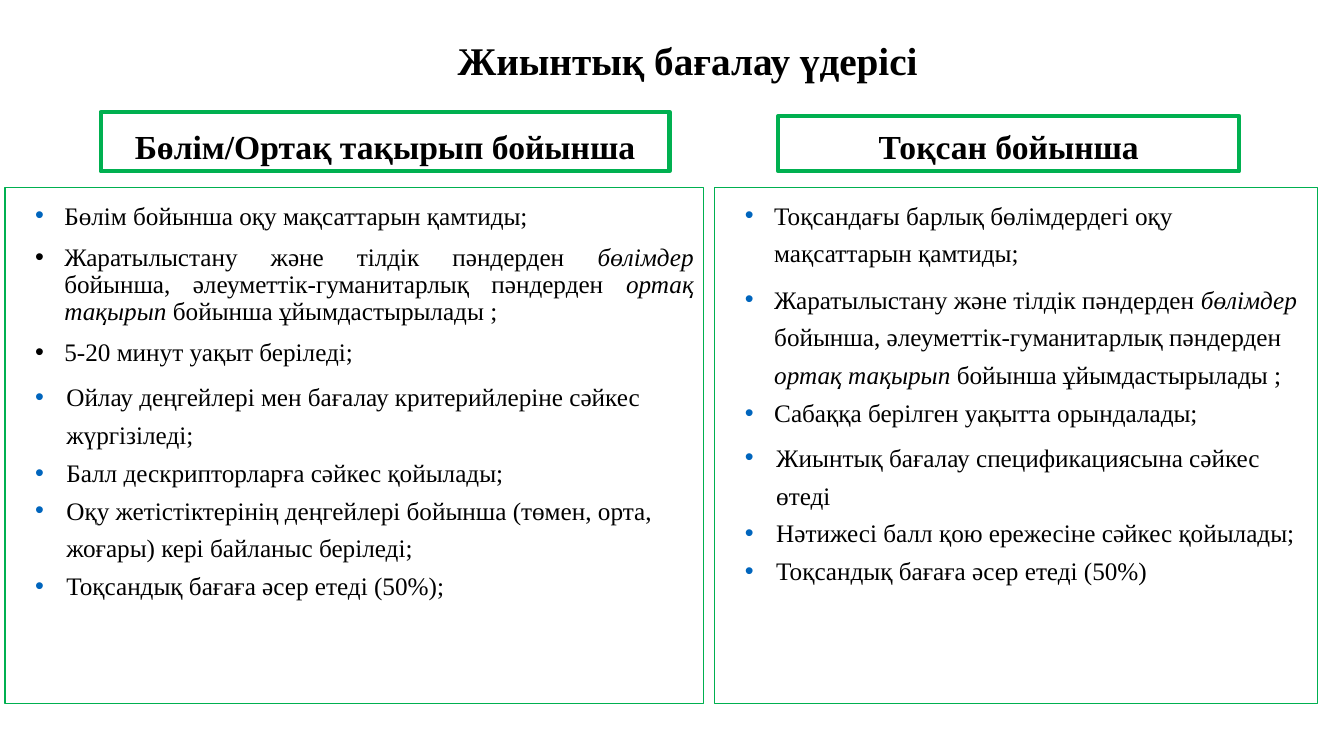
import pptx
import pptx.dml.color
import pptx.enum.shapes
import pptx.enum.text
import pptx.util
from pptx.util import Inches
from lxml import etree

BLACK = pptx.dml.color.RGBColor(0x00, 0x00, 0x00)
GREEN = pptx.dml.color.RGBColor(0x00, 0xB0, 0x50)
BLUE = pptx.dml.color.RGBColor(0x00, 0x65, 0xBD)
FONT = "Times New Roman"
ALIGN = pptx.enum.text.PP_ALIGN
ANCHOR = pptx.enum.text.MSO_ANCHOR


def add_run(p, text, size, bold=False, italic=False):
    r = p.add_run()
    r.text = text
    r.font.name = FONT
    r.font.size = pptx.util.Pt(size)
    r.font.bold = bold
    r.font.italic = italic
    r.font.color.rgb = BLACK


def add_bullet(p, color, margin, indent):
    """Give the paragraph a coloured bullet with a hanging indent."""
    pPr = p._p.get_or_add_pPr()
    pPr.set("marL", str(Inches(margin)))
    pPr.set("indent", str(Inches(indent)))
    buClr = etree.SubElement(pPr, pptx.oxml.ns.qn("a:buClr"))
    etree.SubElement(buClr, pptx.oxml.ns.qn("a:srgbClr"), val=str(color))
    etree.SubElement(pPr, pptx.oxml.ns.qn("a:buFont"), typeface="Arial")
    etree.SubElement(pPr, pptx.oxml.ns.qn("a:buChar"), char="•")


prs = pptx.Presentation()
prs.slide_width = Inches(13.33)
prs.slide_height = Inches(7.5)
s = prs.slides.add_slide(prs.slide_layouts[6])

# Text pieces at odd positions are italic
subjects = [
    "Жаратылыстану және тілдік пәндерден ",
    "бөлімдер ",
    "бойынша, әлеуметтік-гуманитарлық пәндерден ",
    "ортақ тақырып ",
    "бойынша ұйымдастырылады ;",
]

# Paragraph styles: alignment, line spacing, bullet colour, left margin, indent
NEAR = (ALIGN.LEFT, 1.25, BLUE, 0.49, -0.29)
TIGHT = (ALIGN.JUSTIFY, 0.9, BLACK, 0.49, -0.29)
FAR = (ALIGN.LEFT, 1.25, BLUE, 0.51, -0.31)

# Each item: style, space before, space after, text pieces
section_items = [
    (NEAR, 0, 0, ["Бөлім бойынша оқу мақсаттарын қамтиды;"]),
    (TIGHT, 10, 0, subjects),
    (TIGHT, 10, 0, ["5-20 минут уақыт беріледі;"]),
    (FAR, 5, 0, ["Ойлау деңгейлері мен бағалау критерийлеріне сәйкес жүргізіледі;"]),
    (FAR, 0, 0, ["Балл дескрипторларға сәйкес қойылады;"]),
    (FAR, 0, 0, ["Оқу жетістіктерінің деңгейлері бойынша (төмен, орта, жоғары) "
                 "кері байланыс беріледі;"]),
    (FAR, 0, 0, ["Тоқсандық бағаға әсер етеді (50%);"]),
]
term_items = [
    (NEAR, 0, 6, ["Тоқсандағы барлық бөлімдердегі оқу мақсаттарын қамтиды;"]),
    (NEAR, 0, 0, subjects),
    (NEAR, 0, 0, ["Сабаққа берілген уақытта орындалады;"]),
    (FAR, 5, 0, ["Жиынтық бағалау спецификациясына сәйкес өтеді"]),
    (FAR, 0, 0, ["Нәтижесі балл қою ережесіне сәйкес қойылады;"]),
    (FAR, 0, 0, ["Тоқсандық бағаға әсер етеді (50%)"]),
]

# Each column: heading, heading box, list box, items
columns = [
    ("Бөлім/Ортақ тақырып бойынша", (1, 1.11, 5.64, 0.59),
     (0.05, 1.86, 6.93, 5.12), section_items),
    ("Тоқсан бойынша", (7.72, 1.15, 4.57, 0.55),
     (7.09, 1.86, 5.98, 5.12), term_items),
]

for heading, heading_box, list_box, items in columns:
    frames = []
    for box, weight, anchor in ((heading_box, 3, ANCHOR.BOTTOM),
                                (list_box, 0.75, ANCHOR.TOP)):
        sp = s.shapes.add_shape(pptx.enum.shapes.MSO_SHAPE.RECTANGLE,
                                *[Inches(v) for v in box])
        sp.shadow.inherit = False
        sp.fill.background()
        sp.line.color.rgb = GREEN
        sp.line.width = pptx.util.Pt(weight)
        tf = sp.text_frame
        tf.word_wrap = True
        tf.vertical_anchor = anchor
        frames.append(tf)

    heading_tf, list_tf = frames
    p = heading_tf.paragraphs[0]
    p.alignment = ALIGN.CENTER
    p.line_spacing = 0.9
    add_run(p, heading, 24, bold=True)

    for i, (style, before, after, pieces) in enumerate(items):
        align, spacing, color, margin, indent = style
        p = list_tf.add_paragraph() if i else list_tf.paragraphs[0]
        p.alignment = align
        p.line_spacing = spacing
        p.space_before = pptx.util.Pt(before)
        p.space_after = pptx.util.Pt(after)
        add_bullet(p, color, margin, indent)
        for j, piece in enumerate(pieces):
            add_run(p, piece, 18, italic=j % 2 == 1)

title = s.shapes.add_textbox(Inches(0.47), Inches(0.21), Inches(12.7), Inches(0.83))
tf = title.text_frame
tf.word_wrap = True
tf.vertical_anchor = ANCHOR.MIDDLE
p = tf.paragraphs[0]
p.alignment = ALIGN.CENTER
p.line_spacing = 0.9
add_run(p, "Жиынтық бағалау үдерісі", 28, bold=True)

prs.save("out.pptx")
